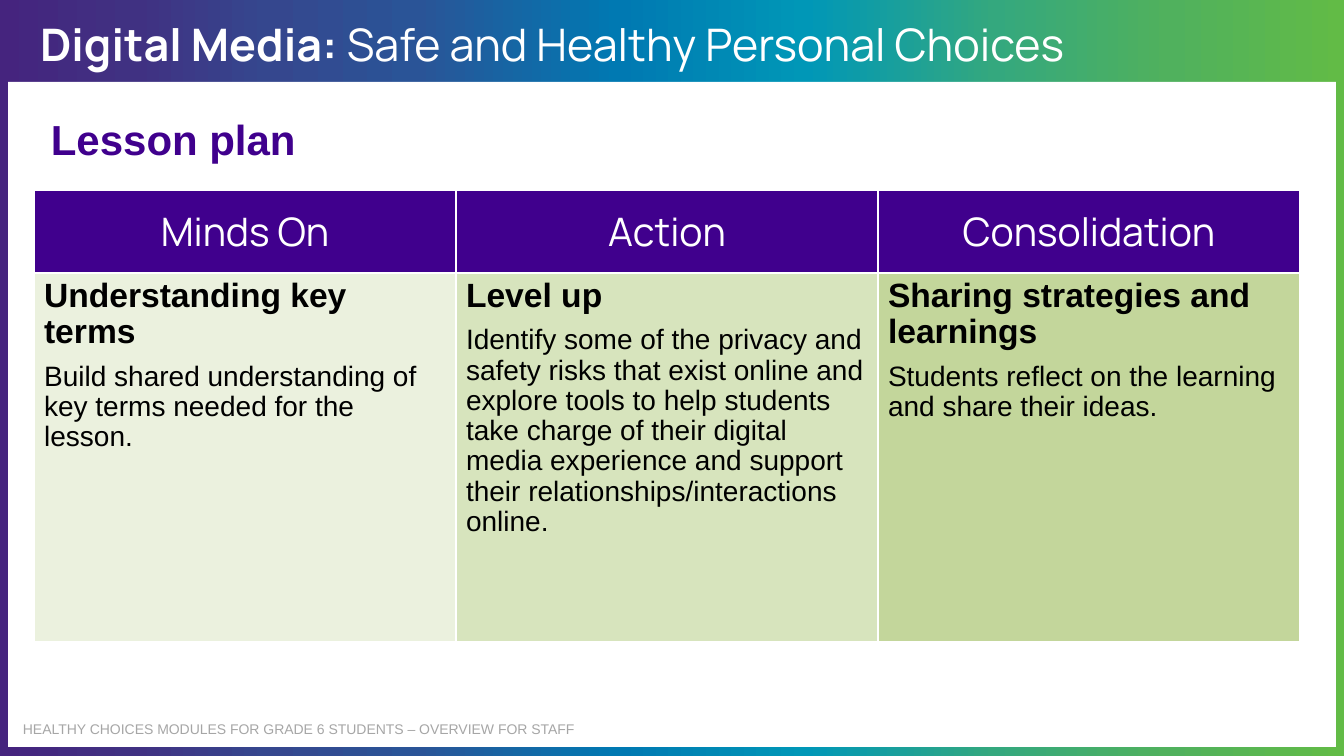
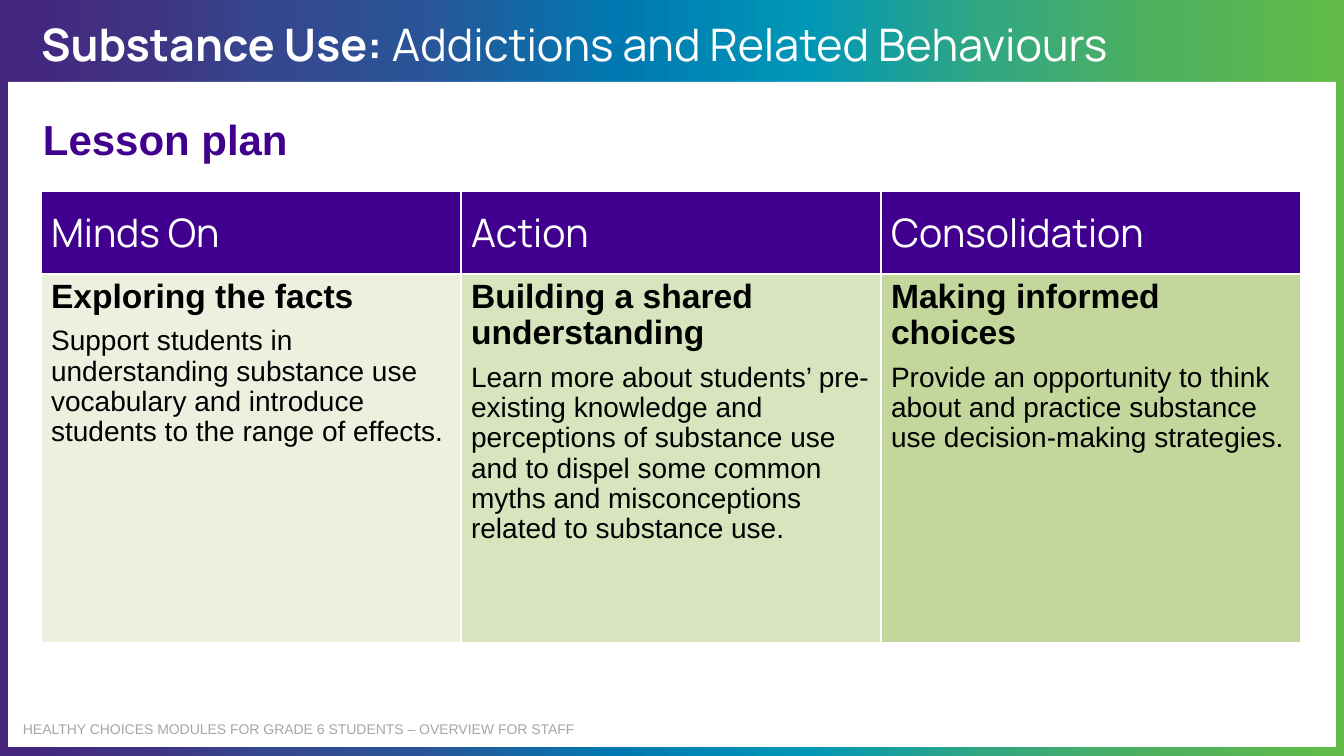
from lxml import etree
from pptx import Presentation
from pptx.dml.color import RGBColor
from pptx.enum.shapes import MSO_SHAPE
from pptx.enum.text import MSO_ANCHOR, PP_ALIGN
from pptx.oxml import parse_xml
from pptx.oxml.ns import nsdecls, qn
from pptx.util import Pt

RECTANGLE = MSO_SHAPE.RECTANGLE
LEFT, CENTER = PP_ALIGN.LEFT, PP_ALIGN.CENTER
TOP, MIDDLE = MSO_ANCHOR.TOP, MSO_ANCHOR.MIDDLE

WIDTH, HEIGHT = 1344, 756
EMU_PER_PX = 12192000 / WIDTH
WHITE, BLACK, PURPLE, GREY = "FFFFFF", "000000", "40008D", "A6A6A6"
COLUMN_FILLS = ["EBF1DE", "D7E4BD", "C3D69B"]
GRADIENT = [(0, "45247E"), (10, "403182"), (20, "35478E"), (31, "2A5497"), (46, "0079B2"),
            (60, "0097B7"), (74, "34A87E"), (87, "50B15D"), (100, "62BB46")]
HEADING_FONT, BODY_FONT = "Manrope", "Arial"
HEADER_HEIGHT, BODY_HEIGHT = 83, 369
BODY_SPACING = 0.97

FOOTER = "HEALTHY CHOICES MODULES FOR GRADE 6 STUDENTS – OVERVIEW FOR STAFF"
SUBTITLE = "Lesson plan"
STAGES = ["Minds On", "Action", "Consolidation"]
LESSONS = [
    {
        "title": ("Digital Media: ", "Safe and Healthy Personal Choices"),
        "title_left": 30, "subtitle_left": 41,
        "table_at": (34, 190), "column_width": 422, "header_align": CENTER,
        "steps": [
            ("Understanding key terms",
             "Build shared understanding of key terms needed for the lesson."),
            ("Level up",
             "Identify some of the privacy and safety risks that exist online and explore tools "
             "to help students take charge of their digital media experience and support their "
             "relationships/interactions online."),
            ("Sharing strategies and learnings",
             "Students reflect on the learning and share their ideas."),
        ],
    },
    {
        "title": ("Substance Use: ", "Addictions and Related Behaviours"),
        "title_left": 31, "subtitle_left": 33,
        "table_at": (41, 191), "column_width": 420, "header_align": LEFT,
        "steps": [
            ("Exploring the facts",
             "Support students in understanding substance use vocabulary and introduce students "
             "to the range of effects."),
            ("Building a shared understanding",
             "Learn more about students’ pre-existing knowledge and perceptions of substance use "
             "and to dispel some common myths and misconceptions related to substance use."),
            ("Making informed choices",
             "Provide an opportunity to think about and practice substance use decision-making "
             "strategies."),
        ],
    },
]


def px(length):
    return round(length * EMU_PER_PX)


def box(left, top, width, height):
    return px(left), px(top), px(width), px(height)


def rgb(color):
    return RGBColor.from_string(color)


def write(paragraph, text, size, color=BLACK, font=BODY_FONT, bold=False, align=LEFT,
          after=0, spacing=1.0):
    paragraph.alignment = align
    paragraph.space_before = Pt(0)
    paragraph.space_after = Pt(after)
    paragraph.line_spacing = spacing
    run = paragraph.add_run()
    run.text = text
    run.font.name = font
    run.font.size = Pt(size)
    run.font.bold = bold
    run.font.color.rgb = rgb(color)


def add_text(slide, position, text, **style):
    shape = slide.shapes.add_textbox(*box(*position))
    shape.text_frame.word_wrap = True
    write(shape.text_frame.paragraphs[0], text, **style)
    return shape


def add_panel(slide, position):
    shape = slide.shapes.add_shape(RECTANGLE, *box(*position))
    shape.shadow.inherit = False
    shape.line.fill.background()
    shape.fill.solid()
    shape.fill.fore_color.rgb = rgb(WHITE)
    return shape


def set_gradient(shape):
    shape.fill.gradient()
    shape.fill.gradient_angle = 0
    stops = next(shape.element.iter(qn("a:gsLst")))
    for stop in list(stops):
        stops.remove(stop)
    for position, color in GRADIENT:
        stop = etree.SubElement(stops, qn("a:gs"), pos=str(position * 1000))
        etree.SubElement(stop, qn("a:srgbClr"), val=color)


def build_layout(layout, slide):
    for placeholder in list(layout.placeholders)[1:]:
        layout.shapes.element.remove(placeholder.element)
    frame = add_panel(slide, (0, 0, WIDTH, HEIGHT))
    set_gradient(frame)
    page = add_panel(slide, (8, 82, 1328, 665))
    footer = add_text(slide, (13, 716, 645, 27), FOOTER, size=10, color=GREY)
    for index, shape in enumerate((frame, page, footer), start=2):
        layout.shapes.element.insert(index, shape.element)


def format_cell(cell, fill, anchor):
    cell.fill.solid()
    cell.fill.fore_color.rgb = rgb(fill)
    cell.vertical_anchor = anchor
    properties = cell._tc.get_or_add_tcPr()
    for index, side in enumerate(("lnL", "lnR", "lnT", "lnB")):
        properties.insert(index, parse_xml(
            f'<a:{side} {nsdecls("a")} w="12700"><a:solidFill>'
            f'<a:srgbClr val="{WHITE}"/></a:solidFill></a:{side}>'))


def add_title(slide, left, topic, detail):
    title = slide.shapes.title
    title.left, title.top, title.width, title.height = box(left, 1, 1230, 86)
    title.text_frame.vertical_anchor = MIDDLE
    paragraph = title.text_frame.paragraphs[0]
    for text, bold in ((topic, True), (detail, False)):
        write(paragraph, text, 32, WHITE, HEADING_FONT, bold)


def add_plan(slide, position, column_width, header_align, steps):
    table = slide.shapes.add_table(2, len(steps), *box(
        *position, column_width * len(steps), HEADER_HEIGHT + BODY_HEIGHT)).table
    table.horz_banding = False
    table.rows[0].height, table.rows[1].height = px(HEADER_HEIGHT), px(BODY_HEIGHT)
    for column, (stage, (heading, body), fill) in enumerate(zip(STAGES, steps, COLUMN_FILLS)):
        table.columns[column].width = px(column_width)
        header, step = table.cell(0, column), table.cell(1, column)
        format_cell(header, PURPLE, MIDDLE)
        write(header.text_frame.paragraphs[0], stage, 28, WHITE, HEADING_FONT,
              align=header_align)
        format_cell(step, fill, TOP)
        write(step.text_frame.paragraphs[0], heading, 24, bold=True, after=8,
              spacing=BODY_SPACING)
        write(step.text_frame.add_paragraph(), body, 20, spacing=BODY_SPACING)


def main():
    presentation = Presentation()
    presentation.slide_width, presentation.slide_height = px(WIDTH), px(HEIGHT)
    layout = presentation.slide_layouts[5]
    slides = [presentation.slides.add_slide(layout) for _ in LESSONS]
    build_layout(layout, slides[0])
    for slide, lesson in zip(slides, LESSONS):
        add_title(slide, lesson["title_left"], *lesson["title"])
        add_text(slide, (lesson["subtitle_left"], 109, 302, 61), SUBTITLE,
                 size=30, color=PURPLE, bold=True)
        add_plan(slide, lesson["table_at"], lesson["column_width"],
                 lesson["header_align"], lesson["steps"])
    presentation.save("out.pptx")


if __name__ == "__main__":
    main()
